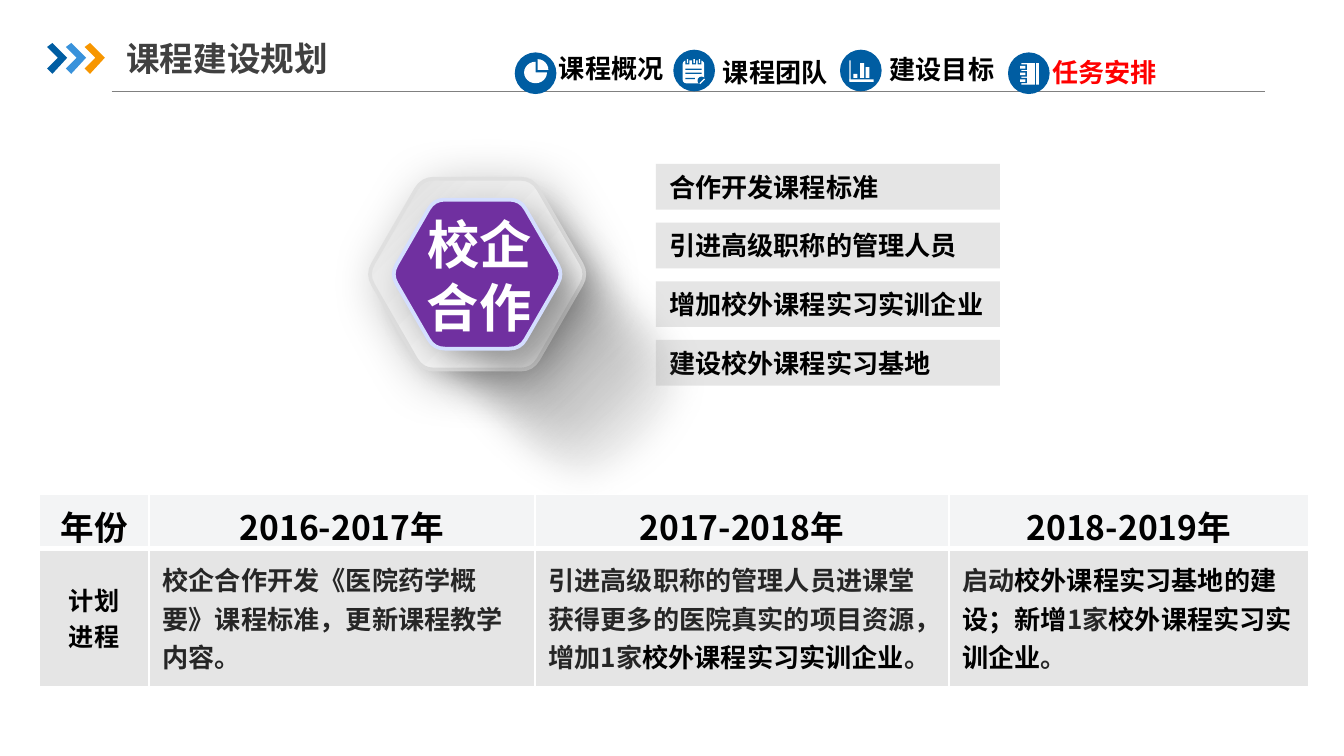
from math import cos, pi, sin

from lxml.etree import SubElement
from pptx import Presentation
from pptx.dml.color import RGBColor
from pptx.enum.shapes import MSO_CONNECTOR, MSO_SHAPE as Shape
from pptx.enum.text import MSO_ANCHOR as Anchor, MSO_AUTO_SIZE as AutoSize, PP_ALIGN as Align
from pptx.oxml.ns import qn
from pptx.util import Inches, Pt

CJK = "Noto Sans CJK SC"
COLORS = {
    "blue": "005DA2", "sky": "3992DB", "orange": "F79600", "rule": "808080",
    "title": "404040", "black": "000000", "red": "FF0000", "white": "FFFFFF",
    "bar": "E5E5E5", "header": "F3F4F5", "body": "262626",
    "purple": "7030A0", "inner_edge": "D4DEFF", "outer_edge": "E0E0E0",
}
SHADE_STOPS = [(0, "000000", 61), (37, "6C6C6C", 50), (100, "D8D8D8", 0)]
METAL_STOPS = [(0, "FFFFFF", 100), (73, "ECECEC", 100), (100, "D9D9D9", 100)]

# Icon parts: shape, left, top, width, height, colour, rotation
PIE_ICON = [
    (Shape.PIE, 3.9, 0.46, 0.17, 0.16, "white", 0),
    (Shape.PIE_WEDGE, 4.0, 0.44, 0.08, 0.08, "white", 90),
]
NOTEPAD_ICON = [
    (Shape.ROUNDED_RECTANGLE, 5.08, 0.45, 0.16, 0.17, "white", 0),
    *[(Shape.RECTANGLE, x, 0.44, 0.03, 0.04, "blue", 0) for x in (5.1, 5.15, 5.19)],
    *[(Shape.RECTANGLE, x + 0.01, 0.44, 0.01, 0.03, "white", 0) for x in (5.1, 5.15, 5.19)],
    *[(Shape.RECTANGLE, 5.1, y, width, 0.01, "blue", 0)
      for y, width in ((0.51, 0.12), (0.54, 0.12), (0.58, 0.07))],
    (Shape.OVAL, 5.19, 0.57, 0.06, 0.06, "blue", 0),
    (Shape.RECTANGLE, 5.2, 0.6, 0.05, 0.01, "white", -45),
]
CHART_ICON = [
    (Shape.RECTANGLE, 6.32, 0.45, 0.01, 0.15, "white", 0),
    (Shape.RECTANGLE, 6.32, 0.59, 0.18, 0.02, "white", 0),
    *[(Shape.RECTANGLE, x, top, 0.03, 0.58 - top, "white", 0)
      for x, top in ((6.35, 0.55), (6.4, 0.47), (6.44, 0.5))],
]
NOTEBOOK_ICON = [
    (Shape.RECTANGLE, 7.6, 0.47, 0.1, 0.16, "white", 0),
    (Shape.RECTANGLE, 7.71, 0.47, 0.02, 0.16, "white", 0),
    *[(Shape.RECTANGLE, 7.59, y - 0.02, 0.05, 0.04, "blue", 0) for y in (0.5, 0.55, 0.6)],
    *[(Shape.RECTANGLE, 7.59, y - 0.01, 0.04, 0.02, "white", 0) for y in (0.5, 0.55, 0.6)],
]
# Label, label left and top, disc left and top, icon, text colour
NAVIGATION = [
    ("课程概况", 4.06, 0.34, 3.83, 0.39, PIE_ICON, "black"),
    ("课程团队", 5.28, 0.37, 5.01, 0.37, NOTEPAD_ICON, "black"),
    ("建设目标", 6.52, 0.35, 6.25, 0.37, CHART_ICON, "black"),
    ("任务安排", 7.73, 0.37, 7.5, 0.39, NOTEBOOK_ICON, "red"),
]
MEASURES = ["合作开发课程标准", "引进高级职称的管理人员", "增加校外课程实习实训企业", "建设校外课程实习基地"]
HEADERS = ["年份", "2016-2017年", "2017-2018年", "2018-2019年"]
PLANS = [
    [("校企合作开发《医院药学概要》课程标准，更新课程教学内容。", "body")],
    [("引进高级职称的管理人员进课堂获得更多的医院真实的项目资源，增加1家", "body"),
     ("校外课程实习实训企业", "black"), ("。", "body")],
    [("启动", "body"), ("校外课程实习基地的建设；新增", "black"), ("1家", "body"),
     ("校外课程实习实训企业", "black"), ("。", "body")],
]


def rgb(name):
    return RGBColor.from_string(COLORS[name])


def format_run(run, size, color, font=CJK):
    run.font.size, run.font.bold = Pt(size), True
    run.font.color.rgb = rgb(color)
    run.font.name = font
    SubElement(run._r.get_or_add_rPr(), qn("a:ea"), typeface=CJK)


def write(frame, text, size, color, font=CJK, align=Align.LEFT):
    frame.text = text
    for paragraph in frame.paragraphs:
        paragraph.alignment = align
        format_run(paragraph.runs[0], size, color, font)


def add_text(slide, text, box, size, color, font=CJK, align=Align.LEFT, wrap=True):
    shape = slide.shapes.add_textbox(*map(Inches, box))
    shape.text_frame.word_wrap = wrap
    write(shape.text_frame, text, size, color, font, align)
    return shape


def finish(shape, color=None):
    shape.shadow.inherit = False
    shape.line.fill.background()
    if color:
        shape.fill.solid()
        shape.fill.fore_color.rgb = rgb(color)
    return shape


def add_preset(slide, kind, left, top, width, height, color=None, rotation=0):
    shape = slide.shapes.add_shape(kind, *map(Inches, (left, top, width, height)))
    shape.rotation = rotation
    return finish(shape, color)


def add_polygon(slide, points, color=None):
    first, *rest = [(Inches(x), Inches(y)) for x, y in points]
    builder = slide.shapes.build_freeform(*first)
    builder.add_line_segments(rest, close=True)
    return finish(builder.convert_to_shape(), color)


def add_color(parent, value, opacity):
    color = SubElement(parent, qn("a:srgbClr"), val=value)
    SubElement(color, qn("a:alpha"), val=str(opacity * 1000))


def set_gradient(shape, stops, angle):
    shape.fill.gradient()
    shape.fill.gradient_angle = angle
    stop_list = shape._element.spPr.find(qn("a:gradFill")).find(qn("a:gsLst"))
    stop_list.clear()
    for position, value, opacity in stops:
        add_color(SubElement(stop_list, qn("a:gs"), pos=str(position * 1000)), value, opacity)


def add_effect(shape, tag, **attributes):
    effects = shape._element.spPr.find(qn("a:effectLst"))
    return SubElement(effects, qn(tag), **attributes)


def add_cast_shade(slide, left, top, width, height):
    """Soft diagonal shade that fades towards the lower right."""
    shape = add_preset(slide, Shape.ROUNDED_RECTANGLE, left, top, width, height, rotation=46)
    shape.adjustments[0] = 0.5
    set_gradient(shape, SHADE_STOPS, 0)
    add_effect(shape, "a:softEdge", rad=str(Inches(0.25)))


def add_hexagon(slide, radius, cut, edge, opacity, blur, distance):
    """Regular hexagon whose corners are rounded off over the length cut."""
    corners = [(3.55 + radius * cos(i * pi / 3), 2.04 + radius * sin(i * pi / 3)) for i in range(6)]
    points = []
    for i, corner in enumerate(corners):
        before, after = corners[i - 1], corners[(i + 1) % 6]
        for t in (0, 0.25, 0.5, 0.75, 1):
            back, ahead = (1 - t) ** 2 * cut / radius, t ** 2 * cut / radius
            points.append([c + back * (b - c) + ahead * (a - c)
                           for b, c, a in zip(before, corner, after)])
    shape = add_polygon(slide, points)
    shape.rotation = 180
    shape.line.color.rgb, shape.line.width = rgb(edge), Pt(2)
    shadow = add_effect(shape, "a:outerShdw", blurRad=str(Pt(blur)), dist=str(Pt(distance)),
                        dir="2700000", algn="tl", rotWithShape="0")
    add_color(shadow, "000000", opacity)
    return shape


def add_header(slide):
    rule = slide.shapes.add_connector(MSO_CONNECTOR.STRAIGHT, *map(Inches, (0.83, 0.68, 9.41, 0.68)))
    rule.line.color.rgb, rule.line.width = rgb("rule"), Pt(0.75)
    SubElement(rule._element.spPr, qn("a:effectLst"))
    chevron = [(0.35, 0.35), (0.39, 0.32), (0.5, 0.43), (0.39, 0.55), (0.35, 0.51), (0.43, 0.43)]
    for i, color in enumerate(("blue", "sky", "orange")):
        add_polygon(slide, [(x + 0.14 * i, y) for x, y in chevron], color)
    title = add_text(slide, "课程建设规划", (0.94, 0.22, 1.95, 0.42), 18, "title").text_frame
    title.margin_left = title.margin_right = 0
    title.vertical_anchor = Anchor.MIDDLE
    for label, left, top, disc_left, disc_top, icon, color in NAVIGATION:
        add_preset(slide, Shape.OVAL, disc_left, disc_top, 0.31, 0.31, "blue")
        for part in icon:
            add_preset(slide, *part)
        add_text(slide, label, (left, top, 0.99, 0.34), 14, color, "Calibri", wrap=False)


def add_badge(slide):
    add_cast_shade(slide, 2.63, 1.55, 2.83, 1.95)
    outer = add_hexagon(slide, 0.82, 0.09, "outer_edge", 28, 28, 7)
    set_gradient(outer, METAL_STOPS, 315)
    add_cast_shade(slide, 2.81, 1.7, 2.4, 1.57)
    inner = add_hexagon(slide, 0.64, 0.08, "inner_edge", 25, 20, 9)
    inner.fill.solid()
    inner.fill.fore_color.rgb = rgb("purple")
    add_text(slide, "校企合作", (2.97, 1.53, 1.19, 1.04), 28, "white", align=Align.CENTER)


def add_measures(slide):
    step = (2.53 - 1.22) / (len(MEASURES) - 1)
    for i, measure in enumerate(MEASURES):
        bar = add_preset(slide, Shape.RECTANGLE, 4.88, 1.22 + step * i, 2.56, 0.34, "bar")
        bar.text_frame.auto_size = AutoSize.SHAPE_TO_FIT_TEXT
        bar.text_frame.word_wrap = True
        write(bar.text_frame, measure, 14, "black")


def style_cell(cell, color, bottom):
    properties = cell._tc.get_or_add_tcPr()
    for side, width in (("L", 1), ("R", 1), ("T", 1), ("B", bottom)):
        border = SubElement(properties, qn(f"a:ln{side}"), w=str(Pt(width)))
        add_color(SubElement(border, qn("a:solidFill")), COLORS["white"], 100)
    cell.fill.solid()
    cell.fill.fore_color.rgb = rgb(color)
    cell.vertical_anchor = Anchor.MIDDLE


def add_schedule(slide):
    table = slide.shapes.add_table(2, 4, *map(Inches, (0.29, 3.68, 9.45, 1.43))).table
    for column, width in zip(table.columns, (0.82, 2.87, 3.08, 2.68)):
        column.width = Inches(width)
    for row, height, color, bottom in zip(table.rows, (0.4, 1.03), ("header", "bar"), (3, 1)):
        row.height = Inches(height)
        for cell in row.cells:
            style_cell(cell, color, bottom)
    for column, header in enumerate(HEADERS):
        write(table.cell(0, column).text_frame, header, 18, "black", align=Align.CENTER)
    write(table.cell(1, 0).text_frame, "计划\n进程", 13.5, "black", align=Align.CENTER)
    for column, plan in enumerate(PLANS, start=1):
        paragraph = table.cell(1, column).text_frame.paragraphs[0]
        for text, color in plan:
            run = paragraph.add_run()
            run.text = text
            format_run(run, 14, color)


def main():
    presentation = Presentation()
    presentation.slide_width, presentation.slide_height = Inches(10), Inches(10 * 9 / 16)
    slide = presentation.slides.add_slide(presentation.slide_layouts[6])
    add_header(slide)
    add_measures(slide)
    add_badge(slide)
    add_schedule(slide)
    presentation.save("out.pptx")


if __name__ == "__main__":
    main()
